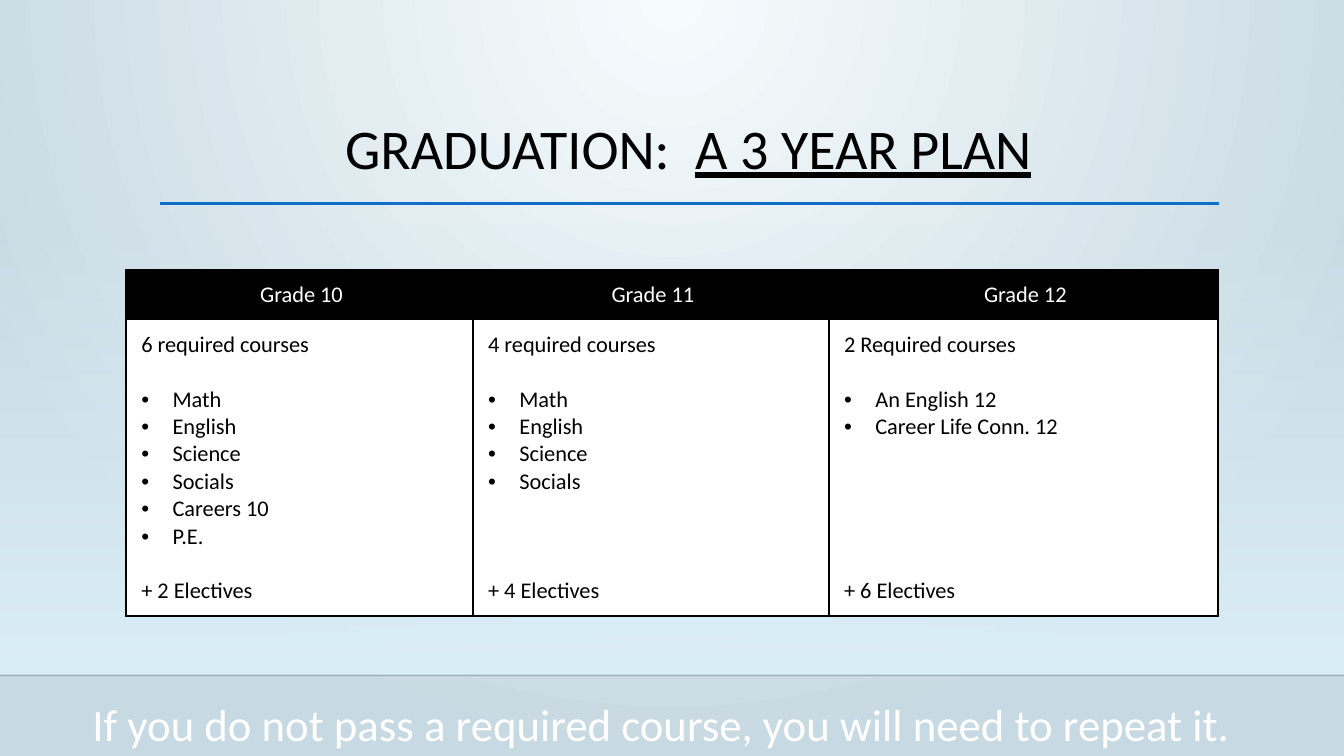
from dataclasses import dataclass

from lxml.etree import SubElement
from pptx import Presentation
from pptx.dml.color import RGBColor
from pptx.enum.shapes import MSO_CONNECTOR, MSO_SHAPE
from pptx.enum.text import MSO_ANCHOR, MSO_AUTO_SIZE, PP_ALIGN
from pptx.oxml import parse_xml
from pptx.oxml.ns import nsdecls, qn
from pptx.util import Cm, Pt


@dataclass(frozen=True)
class Theme:
    font: str = "Calibri"
    black: str = "000000"
    white: str = "FFFFFF"
    blue: str = "0F6FC6"
    edge: str = "000001"
    sky: str = "DBEFF9"
    pale: str = "F6FBFD"
    mist: str = "C7D9E2"
    head: int = 40
    note: int = 32
    body: int = 16
    pitch: float = 19.53  # height of one body line, in points


GRADES = [
    ("Grade 10", "6 required courses",
     ["Math", "English", "Science", "Socials", "Careers 10", "P.E."],
     "+ 2 Electives"),
    ("Grade 11", "4 required courses",
     ["Math", "English", "Science", "Socials"], "+ 4 Electives"),
    ("Grade 12", "2 Required courses",
     ["An English 12", "Career Life Conn. 12"], "+ 6 Electives"),
]
WIDTHS = [8.74, 8.97, 9.8]
HEIGHTS = [1.14, 7.29]
LINES = 10  # body lines in each cell, gaps included


def write(par, words, font, size, color, align=None, under=None,
          before=None, space=None, bullet=False):
    """Add one run to a paragraph and set its format."""
    if bullet:
        props = par._p.get_or_add_pPr()
        props.set("marL", str(Cm(0.79)))
        props.set("indent", str(-Cm(0.79)))
        SubElement(props, qn("a:buFont")).set("typeface", "Arial")
        SubElement(props, qn("a:buChar")).set("char", "•")
    if align is not None:
        par.alignment = align
    if before is not None:
        par.space_before = Pt(before)
    if space is not None:
        par.line_spacing = space
    run = par.add_run()
    run.text = words
    run.font.name = font
    run.font.size = Pt(size)
    run.font.bold = False
    run.font.underline = under
    run.font.color.rgb = RGBColor.from_string(color)


def blend(first, last, course, alpha=100):
    """Gradient fill element; alpha is the first stop's opacity in percent."""
    return parse_xml(
        f'<a:gradFill {nsdecls("a")} rotWithShape="1"><a:gsLst>'
        f'<a:gs pos="0"><a:srgbClr val="{first}">'
        f'<a:alpha val="{alpha * 1000}"/></a:srgbClr></a:gs>'
        f'<a:gs pos="100000"><a:srgbClr val="{last}"/></a:gs>'
        f'</a:gsLst>{course}</a:gradFill>')


class Deck:
    def __init__(self, theme):
        self.theme = theme
        self.show = Presentation()
        self.show.slide_width = Cm(33.87)
        self.show.slide_height = Cm(19.05)
        self.slide = self.show.slides.add_slide(self.show.slide_layouts[5])

    def swap(self, props, fill):
        """Put a gradient in place of a solid fill."""
        props.replace(props.find(qn("a:solidFill")), fill)

    def back(self):
        self.slide.background.fill.solid()
        course = ('<a:path path="circle"><a:fillToRect l="43000" t="0" '
                  'r="43000" b="100000"/></a:path>')
        props = next(self.slide._element.iter(qn("p:bgPr")))
        self.swap(props, blend(self.theme.pale, self.theme.mist, course))

    def veil(self, left, top, width, height):
        """Band that fades in from top to bottom."""
        band = self.slide.shapes.add_shape(
            MSO_SHAPE.RECTANGLE, Cm(left), Cm(top), Cm(width), Cm(height))
        band.shadow.inherit = False
        band.line.fill.background()
        band.fill.solid()
        course = '<a:lin ang="5400000" scaled="0"/>'
        sky = self.theme.sky
        self.swap(band._element.spPr, blend(sky, sky, course, alpha=0))

    def rule(self, left, right, top, color, width, alpha=None):
        line = self.slide.shapes.add_connector(
            MSO_CONNECTOR.STRAIGHT, Cm(left), Cm(top), Cm(right), Cm(top))
        line.line.color.rgb = RGBColor.from_string(color)
        line.line.width = Pt(width)
        props = line._element.spPr
        if alpha is not None:
            tint = next(props.iter(qn("a:srgbClr")))
            SubElement(tint, qn("a:alpha")).set("val", str(alpha * 1000))
        SubElement(props, qn("a:effectLst"))

    def title(self, left, top, width, height, words, lined):
        box = self.slide.shapes.title
        box.left, box.top = Cm(left), Cm(top)
        box.width, box.height = Cm(width), Cm(height)
        frame = box.text_frame
        frame.auto_size = MSO_AUTO_SIZE.NONE
        frame.vertical_anchor = MSO_ANCHOR.TOP
        for part, under in ((words, None), (lined, True)):
            write(frame.paragraphs[0], part, self.theme.font, self.theme.head,
                  self.theme.black, align=PP_ALIGN.CENTER, under=under,
                  space=0.9)

    def note(self, left, top, width, height, words):
        box = self.slide.shapes.add_textbox(
            Cm(left), Cm(top), Cm(width), Cm(height))
        box.text_frame.word_wrap = True
        write(box.text_frame.paragraphs[0], words, self.theme.font,
              self.theme.note, self.theme.white)

    def cell(self, cell, fill, outer):
        """Set insets, borders and fill; outer names the table's edges."""
        cell.margin_left = Cm(0.38)
        cell.margin_right = cell.margin_top = cell.margin_bottom = Cm(0.28)
        props = cell._tc.get_or_add_tcPr()
        for side in "LRTB":
            width = Pt(1.5 if side in outer else 1)
            props.append(parse_xml(
                f'<a:ln{side} {nsdecls("a")} w="{width}"><a:solidFill>'
                f'<a:srgbClr val="{self.theme.black}"/></a:solidFill>'
                f'</a:ln{side}>'))
        cell.fill.solid()
        cell.fill.fore_color.rgb = RGBColor.from_string(fill)

    def table(self, left, top, grades):
        look = self.theme
        grid = self.slide.shapes.add_table(
            len(HEIGHTS), len(WIDTHS), Cm(left), Cm(top),
            Cm(sum(WIDTHS)), Cm(sum(HEIGHTS))).table
        for row, height in zip(grid.rows, HEIGHTS):
            row.height = Cm(height)
        for col, (grade, need, courses, extra) in enumerate(grades):
            grid.columns[col].width = Cm(WIDTHS[col])
            ends = "L" * (col == 0) + "R" * (col == len(grades) - 1)
            head, body = grid.cell(0, col), grid.cell(1, col)
            self.cell(head, look.black, ends + "T")
            self.cell(body, look.white, ends + "B")
            head.vertical_anchor = MSO_ANCHOR.MIDDLE
            write(head.text_frame.paragraphs[0], grade, look.font, look.body,
                  look.white, align=PP_ALIGN.CENTER)
            frame = body.text_frame
            write(frame.paragraphs[0], need, look.font, look.body, look.black)
            for rank, course in enumerate(courses):
                write(frame.add_paragraph(), course, look.font, look.body,
                      look.black, bullet=True,
                      before=0 if rank else look.pitch)
            gap = LINES - len(courses) - 3
            write(frame.add_paragraph(), extra, look.font, look.body,
                  look.black, before=gap * look.pitch)


def main():
    theme = Theme()
    deck = Deck(theme)
    deck.back()
    deck.veil(0, 5.61, 33.87, 11.4)
    deck.rule(0, 33.87, 17.02, theme.edge, 1, alpha=20)
    deck.rule(4.04, 30.73, 5.13, theme.blue, 2.5)
    deck.title(4.01, 2.92, 26.67, 2.92, "GRADUATION:  ", "A 3 YEAR PLAN")
    deck.table(3.18, 6.81, GRADES)
    deck.note(2.08, 17.42, 29.67, 1.63,
              "If you do not pass a required course, "
              "you will need to repeat it.")
    deck.show.save("out.pptx")


if __name__ == "__main__":
    main()
